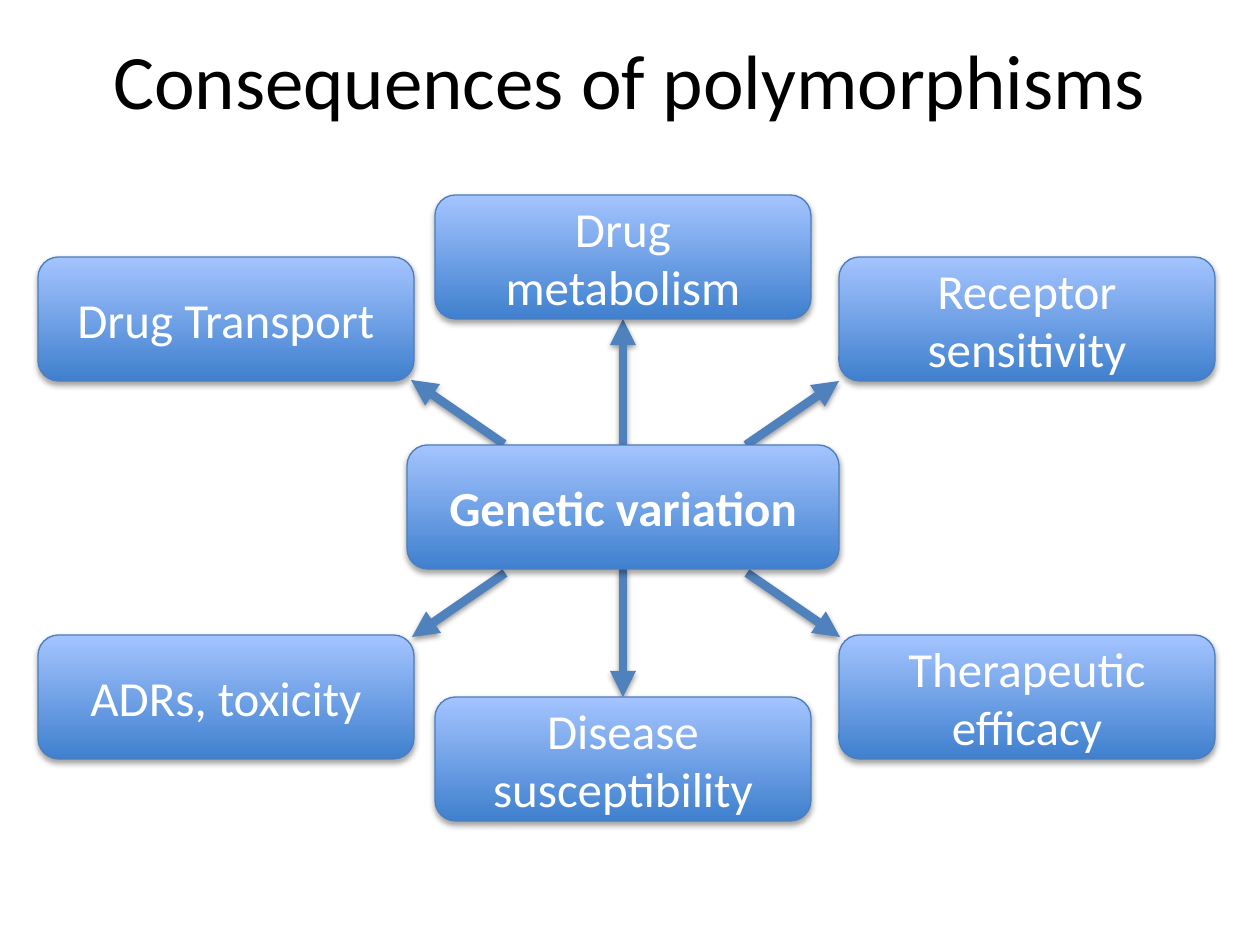
from lxml import etree
from pptx import Presentation
from pptx.dml.color import RGBColor
from pptx.enum.shapes import MSO_CONNECTOR, MSO_SHAPE
from pptx.enum.text import MSO_ANCHOR, PP_ALIGN
from pptx.oxml.ns import qn
from pptx.util import Emu, Pt

BLACK = RGBColor(0x00, 0x00, 0x00)
WHITE = RGBColor(0xFF, 0xFF, 0xFF)
BOX_DARK = RGBColor(0x3F, 0x80, 0xCE)
BOX_LIGHT = RGBColor(0xA4, 0xC4, 0xFF)
BOX_LINE = RGBColor(0x4B, 0x7E, 0xBC)
ARROW = RGBColor(0x4F, 0x81, 0xBD)
FONT = "Calibri"


def px(*lengths):
    return [Emu(round(length * 914400 / 126)) for length in lengths]


def add_shadow(properties, distance, opacity):
    effects = properties.find(qn("a:effectLst"))
    if effects is None:
        effects = etree.SubElement(properties, qn("a:effectLst"))
    shadow = etree.SubElement(effects, qn("a:outerShdw"), blurRad="40000",
                              dist=str(distance), dir="5400000", rotWithShape="0")
    color = etree.SubElement(shadow, qn("a:srgbClr"), val=str(BLACK))
    etree.SubElement(color, qn("a:alpha"), val=str(opacity * 1000))


presentation = Presentation()
presentation.slide_width, presentation.slide_height = px(1260, 945)
slide = presentation.slides.add_slide(presentation.slide_layouts[6])
shapes = slide.shapes

# Title
title = shapes.add_textbox(*px(0, 0, 1260, 158))
title.text_frame.word_wrap = True
title.text_frame.vertical_anchor = MSO_ANCHOR.MIDDLE
paragraph = title.text_frame.paragraphs[0]
paragraph.text = "Consequences of polymorphisms"
paragraph.alignment = PP_ALIGN.CENTER
paragraph.font.name, paragraph.font.size = FONT, Pt(44)
paragraph.font.color.rgb = BLACK

# Arrows, behind the central box: start x, y and end x, y
arrows = []
for ends in [
    (623, 445, 623, 319),
    (623, 569, 623, 697),
    (746, 445, 839, 381),
    (504, 444, 411, 380),
    (747, 573, 840, 637),
    (505, 573, 412, 637),
]:
    arrow = shapes.add_connector(MSO_CONNECTOR.STRAIGHT, *px(*ends))
    arrow.line.color.rgb = ARROW
    arrow.line.width = Pt(5)
    properties = arrow._element.spPr
    etree.SubElement(properties.find(qn("a:ln")), qn("a:tailEnd"), type="triangle")
    add_shadow(properties, 20000, 38)
    arrows.append(arrow)

# Boxes: text, left, top, width
CENTER = "Genetic variation"
boxes = {}
for text, left, top, width in [
    ("Therapeutic efficacy", 839, 635, 376),
    ("ADRs, toxicity", 38, 635, 376),
    ("Receptor sensitivity", 839, 257, 376),
    ("Drug Transport", 38, 257, 376),
    ("Drug metabolism", 435, 195, 376),
    ("Disease susceptibility", 435, 697, 376),
    (CENTER, 407, 445, 432),
]:
    box = shapes.add_shape(MSO_SHAPE.ROUNDED_RECTANGLE, *px(left, top, width, 124))
    box.fill.gradient()
    box.fill.gradient_angle = 90
    for stop, color in zip(box.fill.gradient_stops, (BOX_DARK, BOX_LIGHT)):
        stop.color.rgb = color
    box.line.color.rgb = BOX_LINE
    box.line.width = Pt(0.75)
    box.shadow.inherit = False
    add_shadow(box._element.spPr, 23000, 35)
    box.text_frame.word_wrap = True
    box.text_frame.vertical_anchor = MSO_ANCHOR.MIDDLE
    paragraph = box.text_frame.paragraphs[0]
    paragraph.text = text
    paragraph.alignment = PP_ALIGN.CENTER
    paragraph.font.name, paragraph.font.size = FONT, Pt(28)
    paragraph.font.bold = text == CENTER
    paragraph.font.color.rgb = WHITE
    boxes[text] = box

# Join the vertical arrows to their boxes
for arrow, target, start, end in [
    (arrows[0], "Drug metabolism", 0, 2),
    (arrows[1], "Disease susceptibility", 2, 0),
]:
    arrow.begin_connect(boxes[CENTER], start)
    arrow.end_connect(boxes[target], end)

presentation.save("out.pptx")
